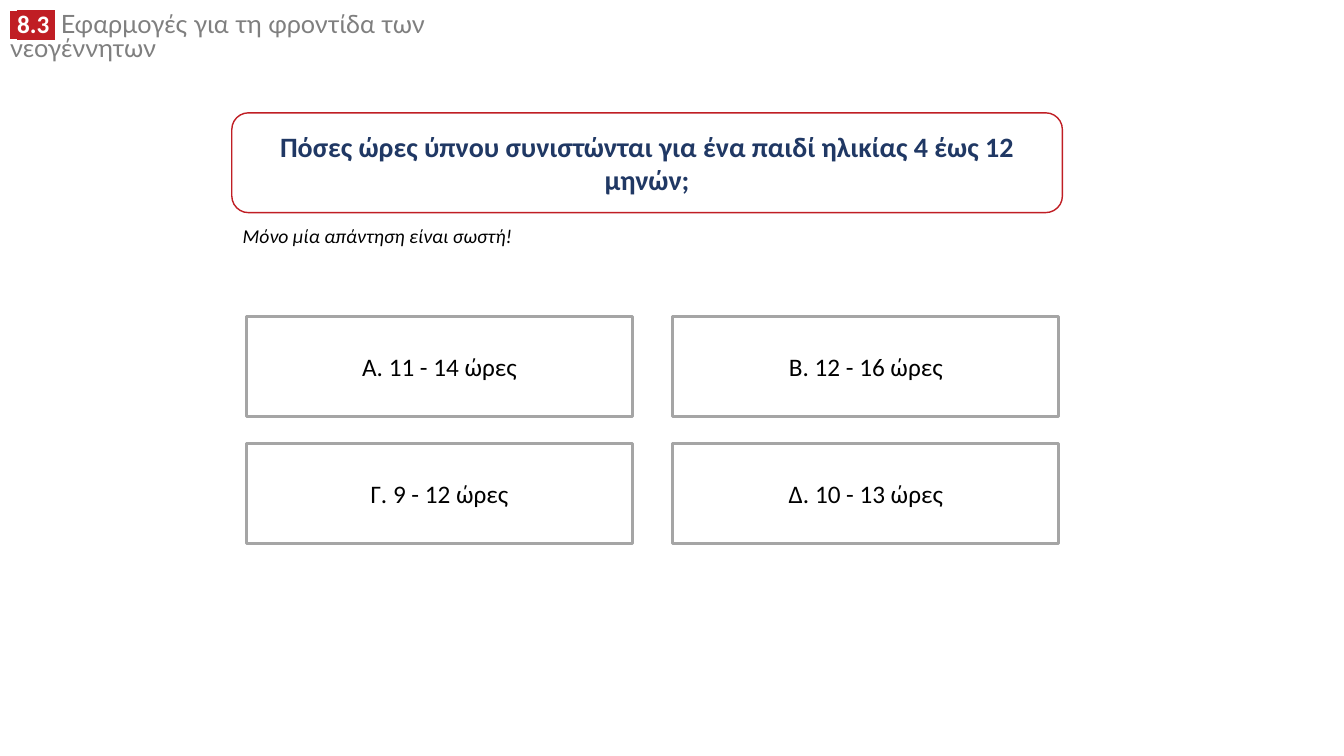
from lxml.etree import SubElement
from pptx import Presentation
from pptx.dml.color import RGBColor
from pptx.enum.shapes import MSO_SHAPE
from pptx.enum.text import MSO_ANCHOR, MSO_AUTO_SIZE, PP_ALIGN
from pptx.oxml.ns import qn
from pptx.util import Pt

RED = RGBColor(0xC0, 0x1E, 0x24)
NAVY = RGBColor(0x20, 0x38, 0x64)
GRAY = RGBColor(0x7F, 0x7F, 0x7F)
SILVER = RGBColor(0xA5, 0xA5, 0xA5)
WHITE = RGBColor(0xFF, 0xFF, 0xFF)
BLACK = RGBColor(0, 0, 0)

# Content
BADGE = {"bold": True, "color": WHITE, "mark": RED}
PLAIN = {"bold": False, "color": GRAY}
TITLE = [
    (" ", {"name": "Arial", **BADGE}),
    ("8.3 ", {"name": "Calibri", **BADGE}),
    (" ", {"name": "Calibri", **PLAIN}),
    ("Εφαρμογές για τη φροντίδα των νεογέννητων", {"name": "Lato", **PLAIN}),
]
QUESTION = "Πόσες ώρες ύπνου συνιστώνται για ένα παιδί ηλικίας 4 έως 12 μηνών;"
HINT = "Μόνο μία απάντηση είναι σωστή!"
ANSWERS = [
    ["A. 11 - 14 ώρες", "B. 12 - 16 ώρες"],
    ["Γ. 9 - 12 ώρες", "Δ. 10 - 13 ώρες"],
]

# Layout in points
TITLE_BOX = (0, 6.5, 412.5, 24.5)
ASK_BOX = (165.6, 80.6, 593.3, 71.3)
HINT_BOX = (166.3, 156.2, 211, 24.5)
GRID_X, GRID_Y = 176, 226.3
CELL_W, CELL_H = 275.8, 71.3
GAP_X, GAP_Y = 28.8, 19.4


def style(run, size, name="Calibri", color=BLACK, mark=None, **rest):
    form = {"size": Pt(size), "name": name, **rest}
    for key, val in form.items():
        setattr(run.font, key, val)
    run.font.color.rgb = color
    if mark is not None:
        props = run.font._element
        light = SubElement(props, qn("a:highlight"))
        SubElement(light, qn("a:srgbClr"), val=str(mark))
        props.find(qn("a:solidFill")).addnext(light)


def add_box(slide, kind, box, text, edge, width, **form):
    shape = slide.shapes.add_shape(kind, *map(Pt, box))
    shape.shadow.inherit = False
    shape.fill.solid()
    shape.fill.fore_color.rgb = WHITE
    shape.line.color.rgb = edge
    shape.line.width = Pt(width)
    frame = shape.text_frame
    frame.word_wrap = True
    frame.vertical_anchor = MSO_ANCHOR.MIDDLE
    para = frame.paragraphs[0]
    para.alignment = PP_ALIGN.CENTER
    run = para.add_run()
    run.text = text
    style(run, **form)


deck = Presentation()
deck.slide_width, deck.slide_height = Pt(960), Pt(540)
slide = deck.slides.add_slide(deck.slide_layouts[5])

# Title with its number badge
title = slide.shapes.title
for key, val in zip(("left", "top", "width", "height"), TITLE_BOX):
    setattr(title, key, Pt(val))
frame = title.text_frame
frame.word_wrap = True
frame.auto_size = MSO_AUTO_SIZE.SHAPE_TO_FIT_TEXT
frame.vertical_anchor = MSO_ANCHOR.TOP
para = frame.paragraphs[0]
para.alignment = PP_ALIGN.LEFT
para.line_spacing = 0.8
para.space_before = Pt(0)
for text, form in TITLE:
    run = para.add_run()
    run.text = text
    style(run, 18, **form)

# Question
add_box(slide, MSO_SHAPE.ROUNDED_RECTANGLE, ASK_BOX, QUESTION, RED, 1,
        size=20, color=NAVY, bold=True)

# Hint
hint = slide.shapes.add_textbox(*map(Pt, HINT_BOX)).text_frame
hint.word_wrap = False
run = hint.paragraphs[0].add_run()
run.text = HINT
style(run, 14, italic=True)

# Answer grid
for row, line in enumerate(ANSWERS):
    for col, text in enumerate(line):
        box = (GRID_X + col * (CELL_W + GAP_X),
               GRID_Y + row * (CELL_H + GAP_Y), CELL_W, CELL_H)
        add_box(slide, MSO_SHAPE.RECTANGLE, box, text, SILVER, 2, size=18)

deck.save("out.pptx")
